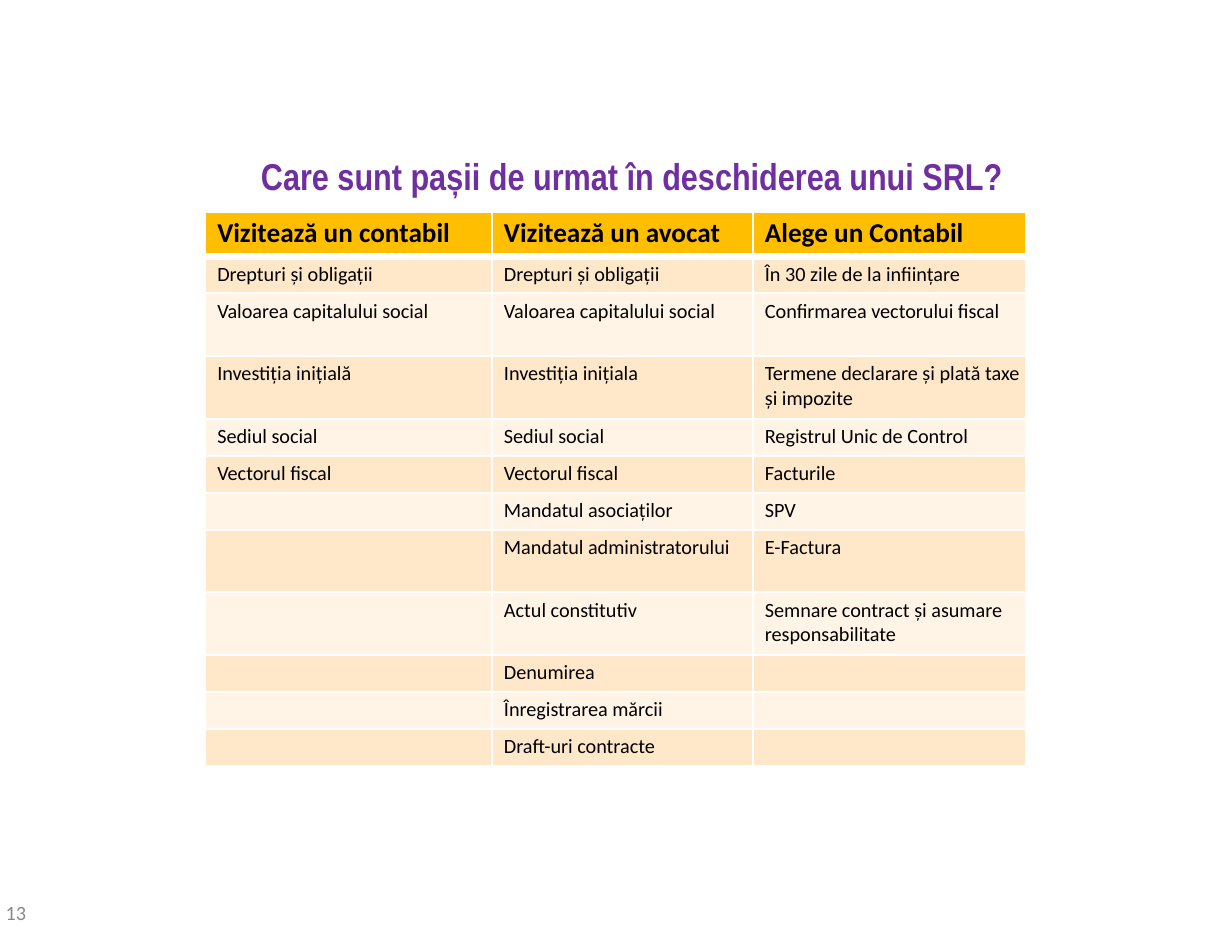
from dataclasses import dataclass

from lxml import etree
from pptx import Presentation
from pptx.dml.color import RGBColor
from pptx.enum.text import MSO_ANCHOR, MSO_AUTO_SIZE, PP_ALIGN
from pptx.oxml.ns import qn
from pptx.util import Inches, Pt

TOP = MSO_ANCHOR.TOP
LEFT = PP_ALIGN.LEFT
NO_FIT = MSO_AUTO_SIZE.NONE
TITLE_ONLY = 5


@dataclass(frozen=True)
class Theme:
    title_font: str = "Arial Narrow"
    body_font: str = "Calibri"
    title: str = "702FA0"
    text: str = "000000"
    number: str = "898989"
    header: str = "FFBF00"
    bands: tuple = ("FFE8CA", "FFF4E6")
    border: str = "FFFFFF"
    title_size: float = 24
    header_size: float = 17.5
    body_size: float = 13
    thin: float = 1.5
    thick: float = 4.5


THEME = Theme()

HEADERS = ("Vizitează un contabil", "Vizitează un avocat", "Alege un Contabil")
STEPS = (
    ("Drepturi și obligații", "Drepturi și obligații", "În 30 zile de la inființare"),
    ("Valoarea capitalului social", "Valoarea capitalului social",
     "Confirmarea vectorului fiscal"),
    ("Investiția inițială", "Investiția inițiala",
     "Termene declarare și plată taxe și impozite"),
    ("Sediul social", "Sediul social", "Registrul Unic de Control"),
    ("Vectorul fiscal", "Vectorul fiscal", "Facturile"),
    ("", "Mandatul asociaților", "SPV"),
    ("", "Mandatul administratorului", "E-Factura"),
    ("", "Actul constitutiv", "Semnare contract și asumare responsabilitate"),
    ("", "Denumirea", ""),
    ("", "Înregistrarea mărcii", ""),
    ("", "Draft-uri contracte", ""),
)
COL_SHARES = (2.56, 2.33, 2.44)
HEADER_HEIGHT, SINGLE, DOUBLE = 0.4, 0.33, 0.56
TALL_STEPS = (1, 2, 6, 7)


def set_margins(target, left=0, top=0):
    target.margin_left, target.margin_top = Inches(left), Inches(top)
    target.margin_right = target.margin_bottom = 0


def format_text(tf, font, size, color, bold=False):
    for p in tf.paragraphs:
        p.alignment = LEFT
        for r in p.runs:
            r.font.name = font
            r.font.size = Pt(size)
            r.font.bold = bold
            r.font.color.rgb = RGBColor.from_string(color)


def set_borders(cell, **widths):
    tcPr = cell._tc.get_or_add_tcPr()
    for side in "LRTB":
        width = Pt(widths.get(side, THEME.thin))
        ln = etree.SubElement(tcPr, qn(f"a:ln{side}"), w=str(width))
        fill = etree.SubElement(ln, qn("a:solidFill"))
        etree.SubElement(fill, qn("a:srgbClr"), val=THEME.border)


def fill_cell(cell, text, color, size, top, bold=False, **widths):
    cell.text = text
    cell.vertical_anchor = TOP
    set_margins(cell, 0.11, top if text else 0)
    format_text(cell.text_frame, THEME.body_font, size, THEME.text, bold)
    set_borders(cell, **widths)
    cell.fill.solid()
    cell.fill.fore_color.rgb = RGBColor.from_string(color)


def add_title(slide, left, top, width, height):
    sp = slide.shapes.title
    sp.left, sp.top, sp.width, sp.height = map(Inches, (left, top, width, height))
    tf = sp.text_frame
    tf.text = "Care sunt pașii de urmat în deschiderea unui SRL?"
    tf.word_wrap = True
    tf.auto_size = NO_FIT
    tf.vertical_anchor = TOP
    set_margins(tf, 0.36, 0.03)
    format_text(tf, THEME.title_font, THEME.title_size, THEME.title, True)


def add_steps_table(slide, left, top, width):
    heights = [HEADER_HEIGHT] + [
        DOUBLE if i in TALL_STEPS else SINGLE for i in range(len(STEPS))]
    table = slide.shapes.add_table(
        len(heights), len(HEADERS), Inches(left), Inches(top),
        Inches(width), Inches(sum(heights))).table
    for col, share in zip(table.columns, COL_SHARES):
        col.width = Inches(width * share / sum(COL_SHARES))
    for row, height in zip(table.rows, heights):
        row.height = Inches(height)
    for c, text in enumerate(HEADERS):
        fill_cell(table.cell(0, c), text, THEME.header, THEME.header_size,
                  0.04, True, B=THEME.thick)
    for i, step in enumerate(STEPS):
        top_line = THEME.thin if i else THEME.thick
        for c, text in enumerate(step):
            fill_cell(table.cell(i + 1, c), text, THEME.bands[i % 2],
                      THEME.body_size, 0.05, T=top_line)


def add_page_number(slide, left, top, width, height):
    sp = slide.shapes.add_textbox(*map(Inches, (left, top, width, height)))
    tf = sp.text_frame
    tf.text = "13"
    tf.word_wrap = True
    set_margins(tf)
    tf.paragraphs[0].line_spacing = Pt(13.5)
    format_text(tf, THEME.body_font, THEME.body_size, THEME.number)


def main():
    prs = Presentation()
    prs.slide_width, prs.slide_height = Inches(11), Inches(8.5)
    slide = prs.slides.add_slide(prs.slide_layouts[TITLE_ONLY])
    add_title(slide, 1.97, 1.34, 7.39, 0.43)
    add_page_number(slide, 0.05, 8.07, 0.26, 0.21)
    add_steps_table(slide, 1.83, 1.89, 7.33)
    prs.save("out.pptx")


if __name__ == "__main__":
    main()
